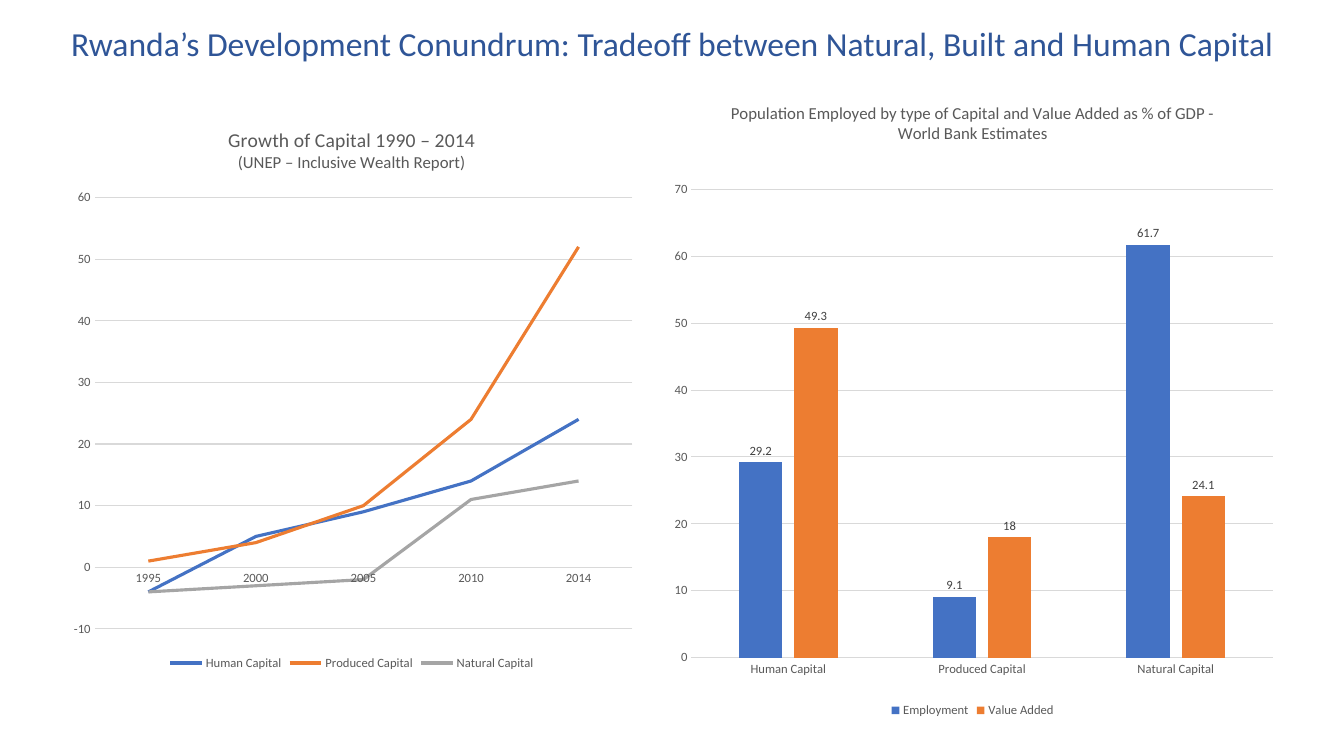
from dataclasses import dataclass

import pptx
import pptx.chart.chart
import pptx.chart.data
import pptx.dml.color
import pptx.enum.chart
import pptx.enum.text
import pptx.oxml
import pptx.oxml.ns
import pptx.slide
import pptx.text.text
import pptx.util

Pt = pptx.util.Pt
RGBColor = pptx.dml.color.RGBColor
ChartType = pptx.enum.chart.XL_CHART_TYPE

FONT = "Calibri"
HEADING_BLUE = RGBColor(0x2F, 0x55, 0x97)
BLACK = RGBColor(0x00, 0x00, 0x00)
TEXT_GREY = RGBColor(0x59, 0x59, 0x59)
LABEL_GREY = RGBColor(0x40, 0x40, 0x40)
GRID_GREY = RGBColor(0xD9, 0xD9, 0xD9)
SERIES_COLORS = (
    RGBColor(0x44, 0x72, 0xC4),
    RGBColor(0xED, 0x7D, 0x31),
    RGBColor(0xA5, 0xA5, 0xA5),
)


@dataclass(frozen=True)
class Box:
    left: float
    top: float
    width: float
    height: float


@dataclass(frozen=True)
class TitleLine:
    text: str
    size: float


@dataclass(frozen=True)
class ChartSpec:
    """A chart; box is in points, plot in fractions of the box."""

    kind: ChartType
    box: Box
    plot: Box
    title: tuple[TitleLine, ...]
    categories: tuple[str, ...]
    series: dict[str, tuple[float, ...]]
    minimum: float
    maximum: float


CAPITAL_GROWTH = ChartSpec(
    kind=ChartType.LINE,
    box=Box(42.5, 76.3, 417.6, 405.4),
    plot=Box(0.06, 0.16, 0.92, 0.76),
    title=(
        TitleLine("Growth of Capital 1990 – 2014", 14),
        TitleLine("(UNEP – Inclusive Wealth Report)", 12),
    ),
    categories=("1995", "2000", "2005", "2010", "2014"),
    series={
        "Human Capital": (-4, 5, 9, 14, 24),
        "Produced Capital": (1, 4, 10, 24, 52),
        "Natural Capital": (-4, -3, -2, 11, 14),
    },
    minimum=-10,
    maximum=60,
)

EMPLOYMENT = ChartSpec(
    kind=ChartType.COLUMN_CLUSTERED,
    box=Box(471.6, 57.6, 446.4, 457.9),
    plot=Box(0.05, 0.17, 0.93, 0.73),
    title=(
        TitleLine(
            "Population Employed by type of Capital and Value Added as % of GDP - "
            "World Bank Estimates",
            12,
        ),
    ),
    categories=("Human Capital", "Produced Capital", "Natural Capital"),
    series={"Employment": (29.2, 9.1, 61.7), "Value Added": (49.3, 18, 24.1)},
    minimum=0,
    maximum=70,
)


def set_font(font: pptx.text.text.Font, size: float, color: RGBColor) -> None:
    font.name = FONT
    font.size = Pt(size)
    font.bold = False
    font.color.rgb = color


def add_heading(slide: pptx.slide.Slide, text: str, box: Box) -> None:
    heading = slide.shapes.add_textbox(
        Pt(box.left), Pt(box.top), Pt(box.width), Pt(box.height)
    )
    frame = heading.text_frame
    frame.word_wrap = True
    frame.vertical_anchor = pptx.enum.text.MSO_ANCHOR.MIDDLE
    frame.text = text
    paragraph = frame.paragraphs[0]
    paragraph.alignment = pptx.enum.text.PP_ALIGN.CENTER
    paragraph.line_spacing = 0.7
    set_font(paragraph.runs[0].font, 24, HEADING_BLUE)


def place_plot(chart: pptx.chart.chart.Chart, plot: Box) -> None:
    """Fix the inner plot area at the given fractions of the chart."""
    area = chart.element.find(".//" + pptx.oxml.ns.qn("c:plotArea"))
    for layout in area.findall(pptx.oxml.ns.qn("c:layout")):
        area.remove(layout)
    settings = {
        "layoutTarget": "inner",
        "xMode": "edge",
        "yMode": "edge",
        "x": plot.left,
        "y": plot.top,
        "w": plot.width,
        "h": plot.height,
    }
    children = "".join(f'<c:{tag} val="{val}"/>' for tag, val in settings.items())
    area.insert(0, pptx.oxml.parse_xml(
        f'<c:layout {pptx.oxml.ns.nsdecls("c")}>'
        f"<c:manualLayout>{children}</c:manualLayout></c:layout>"
    ))


def write_title(chart: pptx.chart.chart.Chart, lines: tuple[TitleLine, ...]) -> None:
    frame = chart.chart_title.text_frame
    frame.text = "\n".join(line.text for line in lines)
    for paragraph, line in zip(frame.paragraphs, lines):
        set_font(paragraph.runs[0].font, line.size, TEXT_GREY)
    chart.chart_title.include_in_layout = False


def style_axes(chart: pptx.chart.chart.Chart, spec: ChartSpec) -> None:
    for axis in (chart.category_axis, chart.value_axis):
        axis.major_tick_mark = pptx.enum.chart.XL_TICK_MARK.NONE
        axis.minor_tick_mark = pptx.enum.chart.XL_TICK_MARK.NONE
        set_font(axis.tick_labels.font, 9, TEXT_GREY)
    values = chart.value_axis
    values.minimum_scale = spec.minimum
    values.maximum_scale = spec.maximum
    values.major_unit = 10
    values.format.line.fill.background()
    for line in (chart.category_axis.format.line, values.major_gridlines.format.line):
        line.color.rgb = GRID_GREY
        line.width = Pt(0.75)


def style_series(chart: pptx.chart.chart.Chart, kind: ChartType) -> None:
    for series, color in zip(chart.plots[0].series, SERIES_COLORS):
        if kind == ChartType.LINE:
            series.smooth = False
            series.marker.style = pptx.enum.chart.XL_MARKER_STYLE.NONE
            series.format.line.color.rgb = color
            series.format.line.width = Pt(2.25)
        else:
            series.invert_if_negative = False
            series.format.fill.solid()
            series.format.fill.fore_color.rgb = color
            labels = series.data_labels
            labels.show_value = True
            labels.position = pptx.enum.chart.XL_LABEL_POSITION.OUTSIDE_END
            set_font(labels.font, 9, LABEL_GREY)


def add_capital_chart(slide: pptx.slide.Slide, spec: ChartSpec) -> None:
    chart_data = pptx.chart.data.CategoryChartData()
    chart_data.categories = spec.categories
    for name, values in spec.series.items():
        chart_data.add_series(name, values)
    box = spec.box
    chart = slide.shapes.add_chart(
        spec.kind, Pt(box.left), Pt(box.top), Pt(box.width), Pt(box.height), chart_data
    ).chart
    set_font(chart.font, 10, BLACK)
    write_title(chart, spec.title)
    place_plot(chart, spec.plot)
    style_axes(chart, spec)
    style_series(chart, spec.kind)
    chart.plots[0].vary_by_categories = False
    if spec.kind == ChartType.COLUMN_CLUSTERED:
        chart.plots[0].gap_width = 219
        chart.plots[0].overlap = -27
    chart.has_legend = True
    chart.legend.position = pptx.enum.chart.XL_LEGEND_POSITION.BOTTOM
    chart.legend.include_in_layout = False
    set_font(chart.legend.font, 9, TEXT_GREY)


def main() -> None:
    deck = pptx.Presentation()
    deck.slide_width, deck.slide_height = Pt(960), Pt(540)
    slide = deck.slides.add_slide(deck.slide_layouts[6])
    add_capital_chart(slide, CAPITAL_GROWTH)
    add_heading(
        slide,
        "Rwanda’s Development Conundrum: Tradeoff between Natural, Built and Human Capital",
        Box(28.8, 9.4, 902.9, 50.4),
    )
    add_capital_chart(slide, EMPLOYMENT)
    deck.save("out.pptx")


if __name__ == "__main__":
    main()
